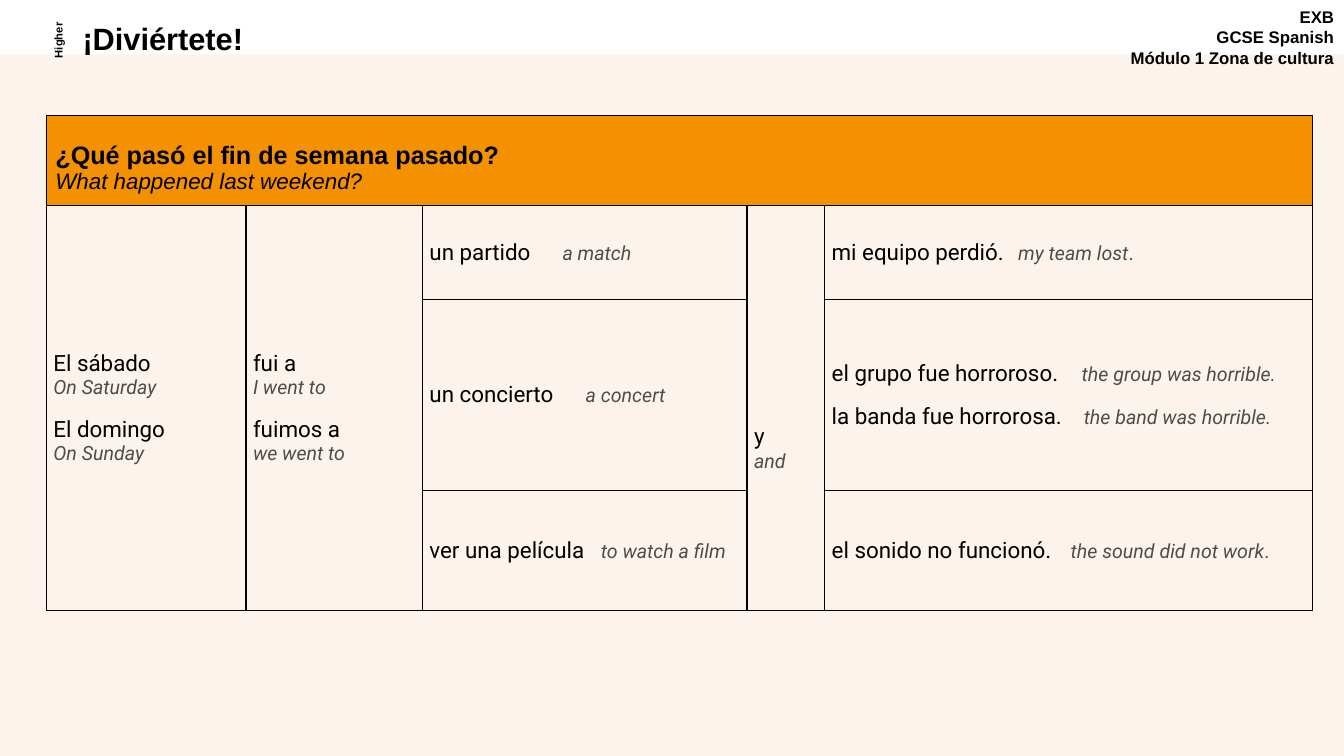
from dataclasses import dataclass
from lxml.etree import SubElement
from pptx import Presentation
from pptx.dml.color import RGBColor
from pptx.enum.shapes import MSO_SHAPE
from pptx.enum.text import MSO_ANCHOR, PP_ALIGN
from pptx.oxml.ns import qn
from pptx.util import Inches, Pt

BLACK = RGBColor(0x00, 0x00, 0x00)
GRAY = RGBColor(0x4D, 0x4D, 0x4C)
ORANGE = RGBColor(0xF3, 0x91, 0x00)
CREAM = RGBColor(0xFD, 0xF3, 0xED)


@dataclass
class TextStyle:
    size: float
    font: str = "Arial"
    color: RGBColor = BLACK
    bold: bool = False
    italic: bool = False


COURSE = TextStyle(12, bold=True)
TITLE = TextStyle(22, bold=True)
TIER = TextStyle(8, bold=True)
QUESTION = TextStyle(18, bold=True)
QUESTION_ENGLISH = TextStyle(16, italic=True)
SPANISH = TextStyle(16, "Roboto")
ENGLISH = TextStyle(14, "Roboto", GRAY, italic=True)
FULL_STOP = TextStyle(14, "Roboto", GRAY)


class SlideBuilder:
    def __init__(self, presentation):
        self.slide = presentation.slides.add_slide(presentation.slide_layouts[6])

    def rectangle(self, left, top, width, height, color):
        shape = self.slide.shapes.add_shape(
            MSO_SHAPE.RECTANGLE, Inches(left), Inches(top), Inches(width), Inches(height))
        shape.shadow.inherit = False
        shape.fill.solid()
        shape.fill.fore_color.rgb = color
        shape.line.fill.background()

    def text(self, left, top, width, height, lines, style, align, rotation=0, spacing=1.0):
        shape = self.slide.shapes.add_textbox(
            Inches(left), Inches(top), Inches(width), Inches(height))
        shape.rotation = rotation
        shape.text_frame.word_wrap = True
        self.paragraphs(shape.text_frame, [[(line, style)] for line in lines])
        for paragraph in shape.text_frame.paragraphs:
            paragraph.alignment = align
            paragraph.line_spacing = spacing

    def paragraphs(self, frame, lines):
        for index, runs in enumerate(lines):
            paragraph = frame.paragraphs[0] if index == 0 else frame.add_paragraph()
            for words, style in runs:
                run = paragraph.add_run()
                run.text = words
                run.font.size = Pt(style.size)
                run.font.name = style.font
                run.font.color.rgb = style.color
                run.font.bold = style.bold
                run.font.italic = style.italic

    def table(self, left, top, widths, heights):
        frame = self.slide.shapes.add_table(
            len(heights), len(widths), Inches(left), Inches(top),
            Inches(sum(widths)), Inches(sum(heights)))
        table = frame.table
        table.first_row = False
        table.horz_banding = False
        for column, width in zip(table.columns, widths):
            column.width = Inches(width)
        for row, height in zip(table.rows, heights):
            row.height = Inches(height)
        for row_index in range(len(heights)):
            for column_index in range(len(widths)):
                cell = table.cell(row_index, column_index)
                thin = row_index == 0 or column_index == 0
                self.borders(cell, 0.75 if thin else 1)
                cell.fill.background()
        return table

    def borders(self, cell, width):
        properties = cell._tc.get_or_add_tcPr()
        for side in ("a:lnL", "a:lnR", "a:lnT", "a:lnB"):
            line = SubElement(properties, qn(side), w=str(Pt(width)))
            fill = SubElement(line, qn("a:solidFill"))
            SubElement(fill, qn("a:srgbClr"), val=str(BLACK))

    def cell(self, cell, lines, side=0.07, top=0, bottom=0):
        cell.vertical_anchor = MSO_ANCHOR.MIDDLE
        cell.margin_left = cell.margin_right = Inches(side)
        cell.margin_top = Inches(top)
        cell.margin_bottom = Inches(bottom)
        self.paragraphs(cell.text_frame, lines)
        return cell.text_frame.paragraphs

    def stacked_cell(self, cell, pairs, top=0):
        lines = [[(words, style)] for pair in pairs
                 for words, style in zip(pair, (SPANISH, ENGLISH))]
        for paragraph in self.cell(cell, lines, top=top)[1::2]:
            paragraph.space_after = Pt(12)

    def phrase_cell(self, cell, phrases):
        lines = []
        for spanish, english, stop, _ in phrases:
            runs = [(spanish + "\t", SPANISH), (english, ENGLISH)]
            lines.append(runs + ([(stop, FULL_STOP)] if stop else []))
        for paragraph, phrase in zip(self.cell(cell, lines), phrases):
            paragraph.space_after = Pt(12)
            tabs = SubElement(paragraph._p.get_or_add_pPr(), qn("a:tabLst"))
            SubElement(tabs, qn("a:tab"), pos=str(Inches(phrase[3])), algn="l")


def main():
    presentation = Presentation()
    presentation.slide_width = Inches(13.33)
    presentation.slide_height = Inches(7.5)
    builder = SlideBuilder(presentation)

    builder.rectangle(0, 0.54, 13.33, 6.96, CREAM)
    builder.text(10.44, 0.02, 2.89, 0.77,
                 ["EXB", "GCSE Spanish", "Módulo 1 Zona de cultura"], COURSE, PP_ALIGN.RIGHT)
    builder.text(0.72, 0.19, 6.88, 0.43, ["¡Diviértete!"], TITLE, PP_ALIGN.LEFT, spacing=0.9)
    builder.text(0.18, 0.29, 0.78, 0.22, ["Higher"], TIER, PP_ALIGN.CENTER, rotation=270)

    table = builder.table(0.46, 1.15, [1.98, 1.75, 3.22, 0.77, 4.84], [0.89, 0.93, 1.9, 1.19])
    heading = table.cell(0, 0)
    heading.merge(table.cell(0, 4))
    heading.fill.solid()
    heading.fill.fore_color.rgb = ORANGE
    question = builder.cell(heading, [
        [("¿Qué pasó el fin de semana pasado?", QUESTION)],
        [("What happened last weekend?", QUESTION_ENGLISH)],
    ], 0.09, 0.04, 0.04)
    question[0].line_spacing = 1.5

    stacks = [
        (0, [("El sábado", "On Saturday"), ("El domingo", "On Sunday")], 0),
        (1, [("fui a", "I went to"), ("fuimos a", "we went to")], 0),
        (3, [("y", "and")], 0.8),
    ]
    for column, pairs, top in stacks:
        table.cell(1, column).merge(table.cell(3, column))
        builder.stacked_cell(table.cell(1, column), pairs, top)

    activities = [
        [("un partido", "a match", "", 1.32)],
        [("un concierto", "a concert", "", 1.55)],
        [("ver una película", "to watch a film", "", 1.7)],
    ]
    outcomes = [
        [("mi equipo perdió.", "my team lost", ".", 1.85)],
        [("el grupo fue horroroso.", "the group was horrible.", "", 2.48),
         ("la banda fue horrorosa.", "the band was horrible.", "", 2.5)],
        [("el sonido no funcionó.", "the sound did not work", ".", 2.37)],
    ]
    for row, (activity, outcome) in enumerate(zip(activities, outcomes), start=1):
        builder.phrase_cell(table.cell(row, 2), activity)
        builder.phrase_cell(table.cell(row, 4), outcome)

    presentation.save("out.pptx")


if __name__ == "__main__":
    main()
